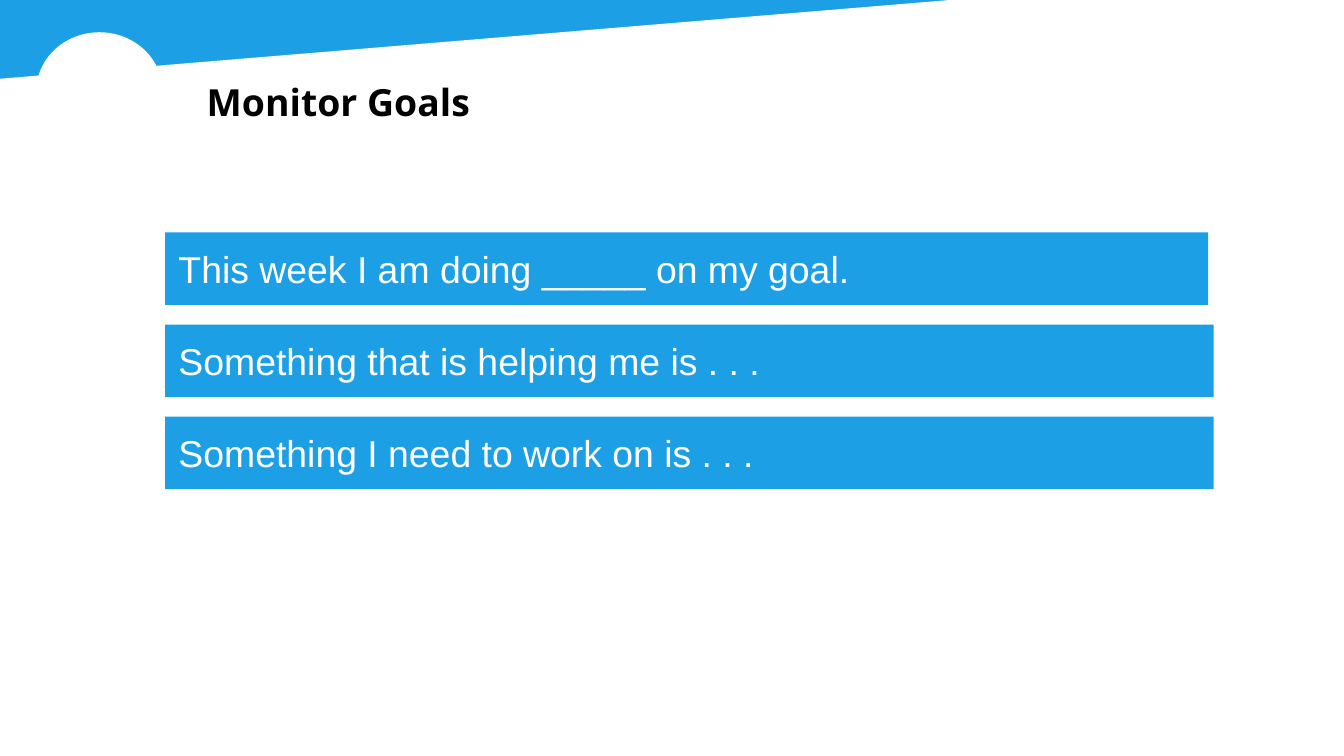
from pptx import Presentation
from pptx.dml.color import RGBColor
from pptx.enum.shapes import MSO_SHAPE as Shape
from pptx.enum.text import MSO_ANCHOR as Anchor, MSO_AUTO_SIZE as AutoSize, PP_ALIGN as Align
from pptx.util import Inches, Pt

BLUE, WHITE, BLACK = "1D9FE6", "FFFFFF", "000000"


def paint(fill, color):
    fill.solid()
    fill.fore_color.rgb = RGBColor.from_string(color)


def write(shape, text, font_name, color):
    frame = shape.text_frame
    frame.word_wrap = True
    frame.auto_size = AutoSize.SHAPE_TO_FIT_TEXT
    frame.vertical_anchor = Anchor.TOP
    frame.margin_left = frame.margin_right = Inches(0.1)
    frame.margin_top = frame.margin_bottom = Inches(0.1)
    paragraph = frame.paragraphs[0]
    paragraph.text = text
    paragraph.alignment = Align.LEFT
    paragraph.font.name = font_name
    paragraph.font.size = Pt(20)
    paint(paragraph.font.fill, color)
    return paragraph


prs = Presentation()
prs.slide_width, prs.slide_height = Inches(10), Inches(10 * 9 / 16)
slide = prs.slides.add_slide(prs.slide_layouts[6])
paint(slide.background.fill, BLUE)

# The white page leaves a blue wedge along the top
corners = [(Inches(x), Inches(y))
           for x, y in [(10.01, -0.23), (0, 0.6), (-0.01, 5.67), (10.03, 5.68)]]
outline = slide.shapes.build_freeform(*corners[0])
outline.add_line_segments(corners[1:], close=True)
page = outline.convert_to_shape()
page.shadow.inherit = False
paint(page.fill, WHITE)
paint(page.line.fill, WHITE)
page.line.width = Pt(2)

badge = slide.shapes.add_shape(
    Shape.OVAL, Inches(0.27), Inches(0.24), Inches(0.94), Inches(0.88))
badge.shadow.inherit = False
paint(badge.fill, WHITE)
badge.line.fill.background()

title = slide.shapes.add_textbox(Inches(1.44), Inches(0.44), Inches(2.3), Inches(0.54))
heading = write(title, "Monitor Goals", "Open Sans", BLACK)
heading.line_spacing = 1.15
heading.font.bold = True

prompts = [
    ("This week I am doing _____ on my goal.", 7.76),
    ("Something that is helping me is . . .", 7.8),
    ("Something I need to work on is . . .", 7.8),
]
first_top, last_top = 1.73, 3.1
pitch = (last_top - first_top) / (len(prompts) - 1)
for row, (prompt, width) in enumerate(prompts):
    bar = slide.shapes.add_shape(
        Shape.RECTANGLE, Inches(1.23), Inches(first_top + pitch * row),
        Inches(width), Inches(0.54))
    bar.shadow.inherit = False
    paint(bar.fill, BLUE)
    bar.line.fill.background()
    write(bar, prompt, "Arial", WHITE)

prs.save("out.pptx")
